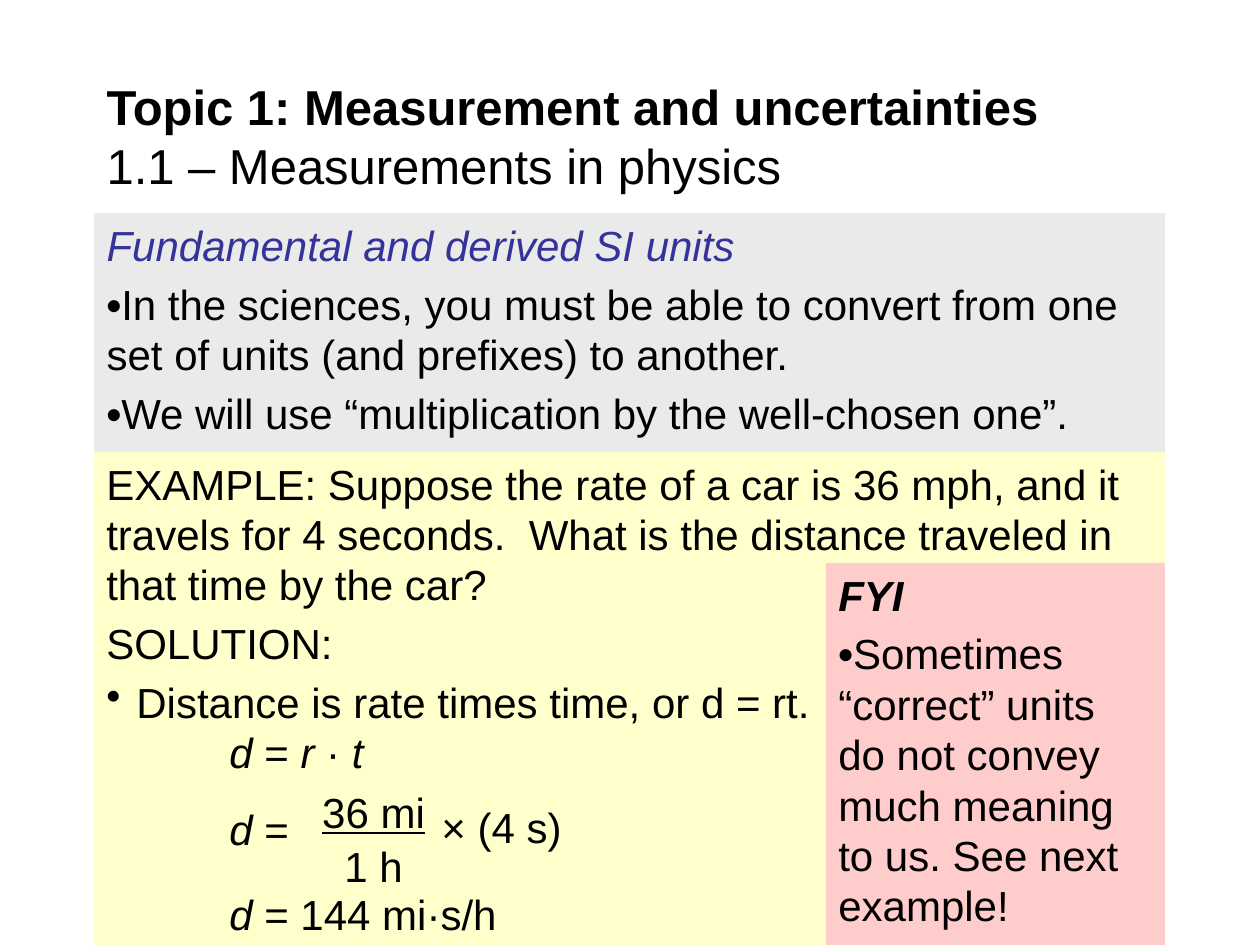
from dataclasses import dataclass

from lxml.etree import SubElement
from pptx import Presentation
from pptx.dml.color import RGBColor as Color
from pptx.enum.shapes import MSO_SHAPE as Shape
from pptx.enum.text import MSO_ANCHOR as Anchor, MSO_AUTO_SIZE as AutoSize, PP_ALIGN as Align
from pptx.oxml.ns import qn
from pptx.util import Pt

PX = 914400 / 126


@dataclass(frozen=True)
class Theme:
    font: str = "Arial"
    ink: str = "000000"
    heading: str = "333399"
    lesson_fill: str = "EAEAEA"
    example_fill: str = "FFFFCC"
    note_fill: str = "FFCCCC"
    title_size: int = 28
    text_size: int = 24
    space_before: float = 4.8
    formula_leading: float = 0.9


THEME = Theme()


def emu(px):
    return round(px * PX)


def place(shape, box):
    shape.left, shape.top, shape.width, shape.height = map(emu, box)


def format_run(run, style="", size=THEME.text_size, color=THEME.ink):
    """Style letters: b bold, i italic, u underlined."""
    font = run.font
    font.name, font.size = THEME.font, Pt(size)
    font.color.rgb = Color.from_string(color)
    font.bold, font.italic, font.underline = (letter in style for letter in "biu")


def write(shape, paragraphs, align=Align.LEFT, leading=None, color=THEME.ink):
    """Fill a shape; each paragraph is a list of (text, style) pieces.

    The colour applies to the first paragraph, the rest are in ink.
    """
    frame = shape.text_frame
    frame.word_wrap, frame.auto_size = True, AutoSize.NONE
    frame.vertical_anchor = Anchor.TOP
    for index, pieces in enumerate(paragraphs):
        paragraph = frame.add_paragraph() if index else frame.paragraphs[0]
        paragraph.alignment, paragraph.line_spacing = align, leading
        paragraph.space_before = Pt(THEME.space_before)
        for text, style in pieces:
            run = paragraph.add_run()
            run.text = text
            format_run(run, style, color=THEME.ink if index else color)


def set_bullet(paragraph, character=None, indent=0):
    properties = paragraph._p.get_or_add_pPr()
    properties.set("marL", str(emu(indent)))
    properties.set("indent", str(-emu(indent)))
    if character:
        SubElement(properties, qn("a:buChar")).set("char", character)
    else:
        SubElement(properties, qn("a:buNone"))


def fill_panel(shape, color):
    shape.fill.solid()
    shape.fill.fore_color.rgb = Color.from_string(color)


def add_panel(slide, box, color):
    panel = slide.shapes.add_shape(Shape.RECTANGLE, *map(emu, box))
    panel.shadow.inherit = False
    panel.line.fill.background()
    fill_panel(panel, color)
    return panel


def add_title(slide, box):
    title = slide.shapes.title
    place(title, box)
    frame = title.text_frame
    frame.auto_size, frame.vertical_anchor = AutoSize.NONE, Anchor.MIDDLE
    paragraph = frame.paragraphs[0]
    paragraph.text = "Topic 1: Measurement and uncertainties\v1.1 – Measurements in physics"
    paragraph.alignment = Align.LEFT
    for run, style in zip(paragraph.runs, ("b", "")):
        format_run(run, style, THEME.title_size)


def add_lesson(slide, box):
    body = slide.placeholders[1]
    place(body, box)
    fill_panel(body, THEME.lesson_fill)
    write(body, [
        [("Fundamental and derived SI units", "i")],
        [("•", "b"), ("In the sciences, you must be able to convert from one "
                      "set of units (and prefixes) to another.", "")],
        [("•", "b"), ("We will use “multiplication by the well-chosen one”.", "")],
    ], color=THEME.heading)
    for paragraph in body.text_frame.paragraphs:
        set_bullet(paragraph)


def add_example(slide, box):
    panel = add_panel(slide, box, THEME.example_fill)
    write(panel, [
        [("EXAMPLE: Suppose the rate of a car is 36 mph, and it travels for 4 seconds.  "
          "What is the distance traveled in that time by the car?", "")],
        [("SOLUTION:", "")],
        [("Distance is rate times time, or d = rt.", "")],
    ])
    set_bullet(panel.text_frame.paragraphs[-1], "•", 30)

    # Worked steps, offset from the panel's corner
    left, top = box[:2]
    steps = [
        ((123, 274, 305, 49), Align.LEFT,
         [[("d", "i"), (" = ", ""), ("r ", "i"), ("· ", ""), ("t", "i")]]),
        ((123, 351, 160, 49), Align.LEFT, [[("d", "i"), (" =", "")]]),
        ((212, 334, 135, 88), Align.CENTER, [[("36 mi", "u")], [("1 h", "")]]),
        ((335, 349, 258, 76), Align.LEFT, [[("× (4 s)", "")]]),
        ((123, 436, 418, 49), Align.LEFT, [[("d", "i"), (" = 144 mi·s/h", "")]]),
    ]
    for (x, y, width, height), align, paragraphs in steps:
        step = slide.shapes.add_textbox(*map(emu, (left + x, top + y, width, height)))
        write(step, paragraphs, align, THEME.formula_leading)


def add_note(slide, box):
    write(add_panel(slide, box, THEME.note_fill), [
        [("FYI", "bi")],
        [("•", "b"), ("Sometimes “correct” units do not convey much meaning to us. "
                      "See next example!", "")],
    ])


def main():
    presentation = Presentation()
    presentation.slide_width, presentation.slide_height = emu(1260), emu(945)
    slide = presentation.slides.add_slide(presentation.slide_layouts[1])
    left, width = 94, 1071
    add_title(slide, (left, 73, width, 124))
    add_lesson(slide, (left, 213, width, 240))
    add_example(slide, (left, 452, width, 493))
    add_note(slide, (826, 563, 339, 382))
    presentation.save("out.pptx")


if __name__ == "__main__":
    main()
